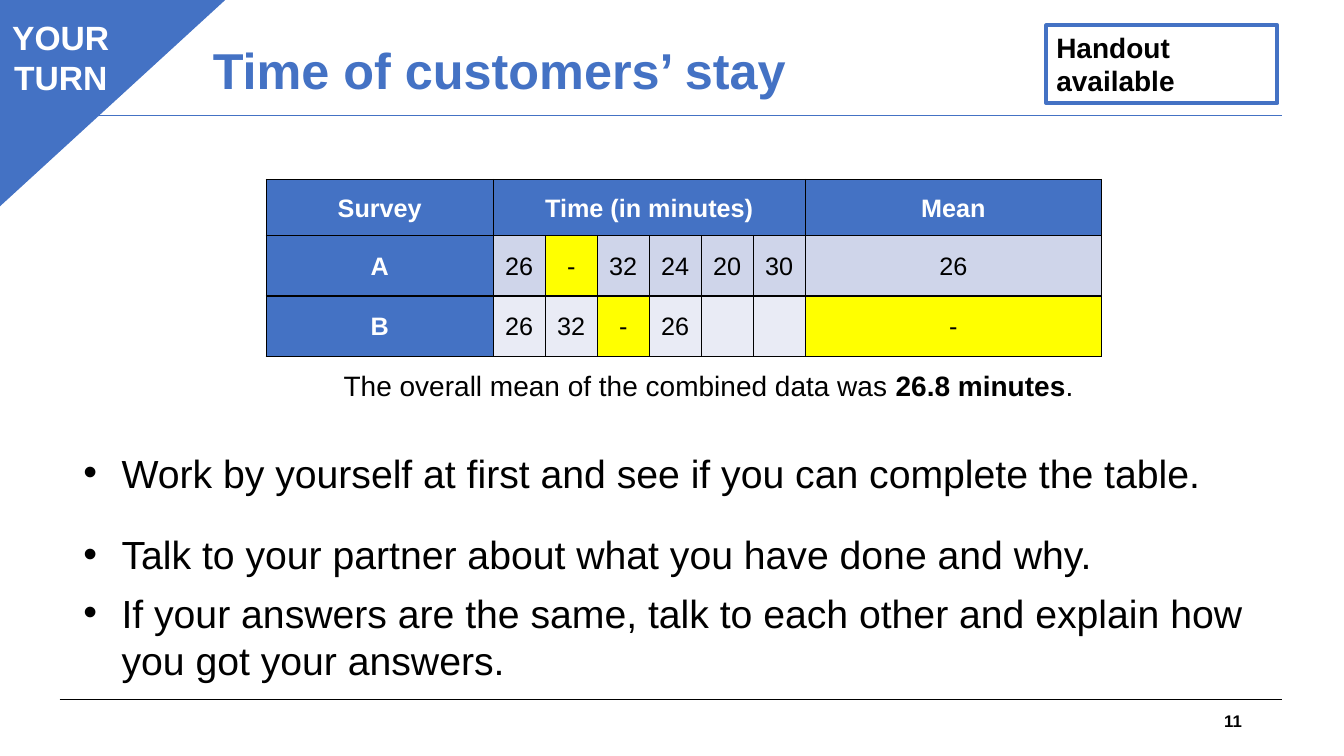
"""Build the slide on the time of customers' stay."""
from lxml.etree import SubElement as Sub
from pptx import Presentation
from pptx.dml.color import RGBColor
from pptx.enum.shapes import MSO_CONNECTOR as Link, MSO_SHAPE as Shape
from pptx.enum.text import MSO_ANCHOR as Anchor, MSO_AUTO_SIZE as Fit, PP_ALIGN as Align
from pptx.oxml.ns import qn
from pptx.util import Cm, Pt

BLUE = RGBColor(0x44, 0x72, 0xC4)
BLACK = RGBColor(0, 0, 0)
WHITE = RGBColor(255, 255, 255)
YELLOW = RGBColor(255, 255, 0)
BANDS = [BLUE, RGBColor(0xCF, 0xD5, 0xEA), RGBColor(0xE9, 0xEB, 0xF5)]

TITLE = "Time of customers’ stay"
ROWS = [
    ["Survey", "Time (in minutes)", "", "", "", "", "", "Mean"],
    ["A", "26", "-", "32", "24", "20", "30", "26"],
    ["B", "26", "32", "-", "26", "", "", "-"],
]
COLS = [5.72] + [1.31] * 6 + [7.47]
HIGHS = [1.42, 1.52, 1.52]
TASKS = [
    ("Work by yourself at first and see if you can complete the table.", 1.5),
    ("Talk to your partner about what you have done and why.", 1.5),
    ("If your answers are the same, talk to each other and explain how you got your answers.", 1.0),
]
NOTE = [
    ("The overall mean of the combined data was ", False),
    ("26.8 minutes", True),
    (".", False),
]
RULES = [(17.63, BLACK), (2.9, BLUE)]


def put(thing, **form):
    for name, value in form.items():
        setattr(thing, name, value)


def place(shape, left, top, width, height):
    put(shape, left=Cm(left), top=Cm(top), width=Cm(width), height=Cm(height))


def write(para, text, size, color=BLACK, bold=False):
    run = para.add_run()
    run.text = text
    put(run.font, name="Arial", size=Pt(size), bold=bold)
    run.font.color.rgb = color


def label(slide, box, lines, size, color, align, fill=None, edge=1, kind=Shape.RECTANGLE):
    shape = slide.shapes.add_shape(kind, *map(Cm, box))
    shape.shadow.inherit = False
    if fill is None:
        shape.fill.background()
    else:
        shape.fill.solid()
        shape.fill.fore_color.rgb = fill
    shape.line.color.rgb = BLUE
    shape.line.width = Pt(edge)
    frame = shape.text_frame
    put(frame, word_wrap=True, vertical_anchor=Anchor.TOP)
    for i, line in enumerate(lines):
        para = frame.add_paragraph() if i else frame.paragraphs[0]
        para.alignment = align
        write(para, line, size, color, True)
    return shape


def note(slide, box, parts, size, **form):
    frame = slide.shapes.add_textbox(*map(Cm, box)).text_frame
    put(frame, word_wrap=True, vertical_anchor=Anchor.MIDDLE)
    put(frame.paragraphs[0], **form)
    for text, bold in parts:
        write(frame.paragraphs[0], text, size, bold=bold)


def border(cell):
    props = cell._tc.get_or_add_tcPr()
    for i, side in enumerate(("lnL", "lnR", "lnT", "lnB")):
        line = props.makeelement(qn("a:" + side), {"w": str(Pt(1))})
        fill = Sub(line, qn("a:solidFill"))
        Sub(fill, qn("a:srgbClr"), val=str(BLACK))
        props.insert(i, line)


def grid(slide):
    frame = slide.shapes.add_table(
        len(ROWS), len(COLS), Cm(6.71), Cm(4.52), Cm(sum(COLS)), Cm(sum(HIGHS)))
    table = frame.table
    for col, width in zip(table.columns, COLS):
        col.width = Cm(width)
    for r, row in enumerate(ROWS):
        table.rows[r].height = Cm(HIGHS[r])
        for c, text in enumerate(row):
            cell = table.cell(r, c)
            edge = Cm(0.03 if r else 0)
            put(cell, vertical_anchor=Anchor.MIDDLE, margin_left=edge,
                margin_right=edge, margin_top=edge, margin_bottom=edge)
            head = r == 0 or c == 0
            cell.fill.solid()
            cell.fill.fore_color.rgb = YELLOW if text == "-" else BLUE if head else BANDS[r]
            border(cell)
            if text:
                para = cell.text_frame.paragraphs[0]
                put(para, alignment=Align.CENTER, line_spacing=1.07)
                write(para, text, 18, WHITE if head else BLACK, head)
    table.cell(0, 1).merge(table.cell(0, 6))


def tasks(body):
    place(body, 1.85, 10.59, 31.55, 6.81)
    frame = body.text_frame
    put(frame, auto_size=Fit.NONE, word_wrap=True, vertical_anchor=Anchor.TOP)
    for i, (text, space) in enumerate(TASKS):
        para = frame.add_paragraph() if i else frame.paragraphs[0]
        put(para, line_spacing=space, space_before=Pt(0), space_after=Pt(8))
        props = para._p.get_or_add_pPr()
        props.set("marL", str(Cm(0.96)))
        props.set("indent", str(-Cm(0.96)))
        Sub(props, qn("a:buFont"), typeface="Arial")
        Sub(props, qn("a:buChar"), char="•")
        write(para, text, 28)


def main():
    deck = Presentation()
    put(deck, slide_width=Cm(33.87), slide_height=Cm(19.05))
    slide = deck.slides.add_slide(deck.slide_layouts[1])
    for y, color in RULES:
        rule = slide.shapes.add_connector(Link.STRAIGHT, Cm(1.5), Cm(y), Cm(32.31), Cm(y))
        rule.line.color.rgb = color
        rule.line.width = Pt(0.75)
        Sub(rule._element.spPr, qn("a:effectLst"))
    note(slide, (23.93, 17.65, 7.62, 1.02), [("11", True)], 12, alignment=Align.RIGHT)
    flag = label(slide, (-0.08, -0.08, 5.82, 5.33), [], 24, WHITE, Align.CENTER,
                 BLUE, kind=Shape.ISOSCELES_TRIANGLE)
    flag.adjustments[0] = 0
    flag._element.spPr.find(qn("a:xfrm")).set("flipV", "1")
    label(slide, (0.03, 0.3, 3, 2.11), ["YOUR", "TURN"], 24, WHITE, Align.CENTER, BLUE, 0.75)
    label(slide, (26.37, 0.64, 5.82, 1.96), ["Handout", "available"], 20, BLACK,
          Align.LEFT, edge=3)
    title = slide.shapes.title
    place(title, 5.11, 1.02, 19.53, 3.68)
    put(title.text_frame, auto_size=Fit.NONE, vertical_anchor=Anchor.TOP)
    para = title.text_frame.paragraphs[0]
    put(para, alignment=Align.LEFT, line_spacing=0.9)
    write(para, TITLE, 36, BLUE, True)
    grid(slide)
    tasks(slide.placeholders[1])
    note(slide, (8.41, 9.14, 19.33, 1.12), NOTE, 20)
    deck.save("out.pptx")


if __name__ == "__main__":
    main()
